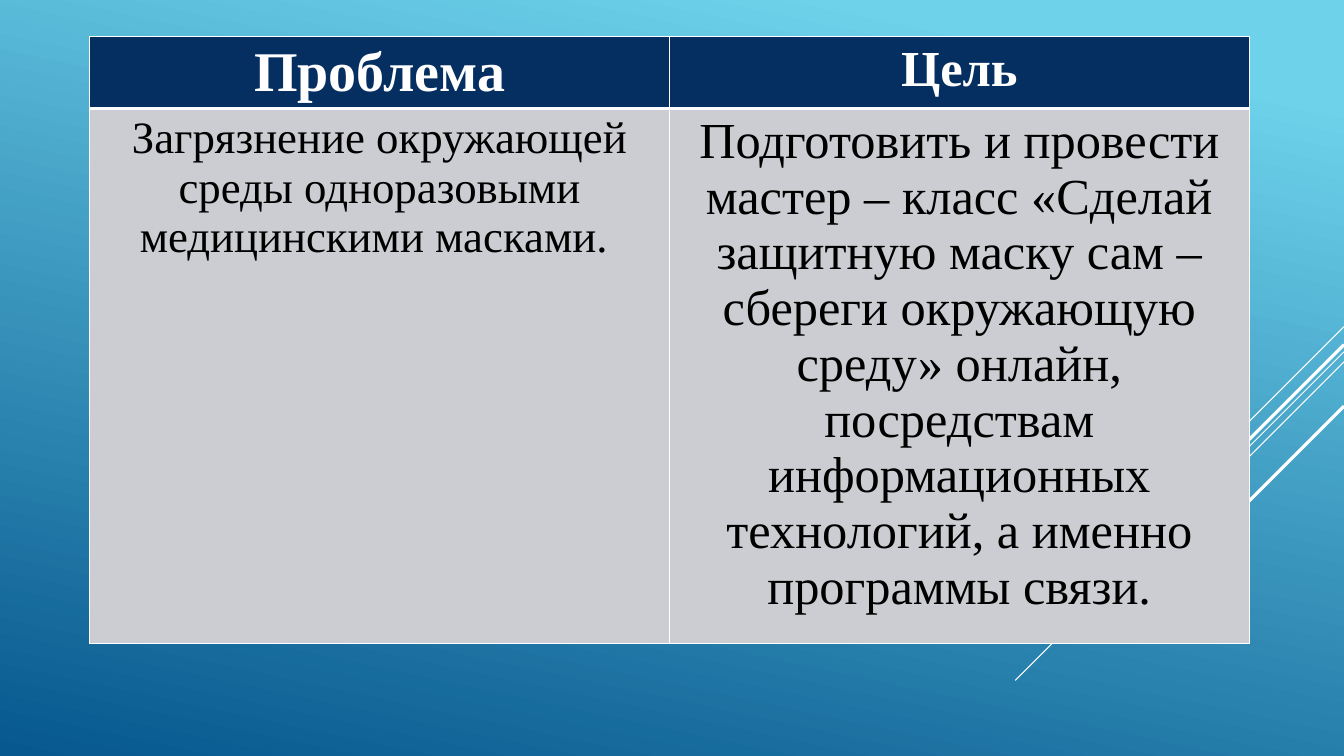
from lxml import etree
from pptx import Presentation
from pptx.dml.color import RGBColor
from pptx.enum.text import PP_ALIGN
from pptx.oxml.ns import qn
from pptx.util import Inches, Pt
from pptx.enum.shapes import MSO_CONNECTOR

CENTER = PP_ALIGN.CENTER
STRAIGHT = MSO_CONNECTOR.STRAIGHT

# Content: each cell is (text, size)
ROWS = [
    [("Проблема", 40), ("Цель", 36)],
    [
        ("Загрязнение окружающей среды одноразовыми медицинскими масками. ", 32),
        ("Подготовить и провести мастер – класс «Сделай защитную маску сам – "
         "сбереги окружающую среду» онлайн, посредствам информационных "
         "технологий, а именно программы связи.", 36),
    ],
]
# Row styles: height, fill, text colour, bold, top and bottom border widths
ROW_STYLES = [
    (0.71, "052F61", "FFFFFF", True, 1, 3),
    (5.31, "CCCDD2", "000000", False, 3, 1),
]
FONT = "Times New Roman"
WHITE = "FFFFFF"
BACKGROUND_STOPS = [(0.1, "6ED2EB"), (1, "06588E")]

# Diagonal rays from the right edge: start height, horizontal reach, width
SLIDE_WIDTH, SLIDE_HEIGHT = 13.33, 7.5
RAYS = [(3.24, 1, 0.75), (3.49, 3.26, 0.75), (3.59, 2.07, 0.75),
        (3.42, 1.91, 2.25), (4.03, 1.39, 2.25)]
TABLE_LEFT, TABLE_TOP, COLUMN_WIDTH = 0.89, 0.36, 5.75


def color(value):
    return RGBColor.from_string(value)


def add_ray(slide, top, reach, width):
    ray = slide.shapes.add_connector(
        STRAIGHT, Inches(SLIDE_WIDTH), Inches(top),
        Inches(SLIDE_WIDTH - reach), Inches(top + reach))
    ray.line.color.rgb = color(WHITE)
    ray.line.width = Pt(width)
    etree.SubElement(ray._element.spPr, qn("a:effectLst"))


def set_borders(cell, top, bottom):
    properties = cell._tc.get_or_add_tcPr()
    for side, width in (("L", 1), ("R", 1), ("T", top), ("B", bottom)):
        border = etree.SubElement(properties, qn(f"a:ln{side}"), w=str(Pt(width)))
        fill = etree.SubElement(border, qn("a:solidFill"))
        etree.SubElement(fill, qn("a:srgbClr"), val=WHITE)


def format_cell(cell, text, size, style):
    _, fill, text_color, bold, top, bottom = style
    set_borders(cell, top, bottom)
    cell.fill.solid()
    cell.fill.fore_color.rgb = color(fill)
    cell.text_frame.text = text
    paragraph = cell.text_frame.paragraphs[0]
    paragraph.alignment = CENTER
    font = paragraph.runs[0].font
    font.name, font.size, font.bold = FONT, Pt(size), bold
    font.color.rgb = color(text_color)


def main():
    presentation = Presentation()
    presentation.slide_width = Inches(SLIDE_WIDTH)
    presentation.slide_height = Inches(SLIDE_HEIGHT)
    slide = presentation.slides.add_slide(presentation.slide_layouts[6])

    # Background gradient, light at the top right
    background = slide.background.fill
    background.gradient()
    background.gradient_angle = 258
    for stop, (position, value) in zip(background.gradient_stops, BACKGROUND_STOPS):
        stop.position = position
        stop.color.rgb = color(value)

    # Rays behind the table
    for ray in RAYS:
        add_ray(slide, *ray)

    # Problem and goal table
    column_count = len(ROWS[0])
    table = slide.shapes.add_table(
        len(ROWS), column_count, Inches(TABLE_LEFT), Inches(TABLE_TOP),
        Inches(COLUMN_WIDTH * column_count),
        Inches(sum(style[0] for style in ROW_STYLES))).table
    for column in table.columns:
        column.width = Inches(COLUMN_WIDTH)
    for row, contents, style in zip(table.rows, ROWS, ROW_STYLES):
        row.height = Inches(style[0])
        for cell, (text, size) in zip(row.cells, contents):
            format_cell(cell, text, size, style)

    presentation.save("out.pptx")


if __name__ == "__main__":
    main()
